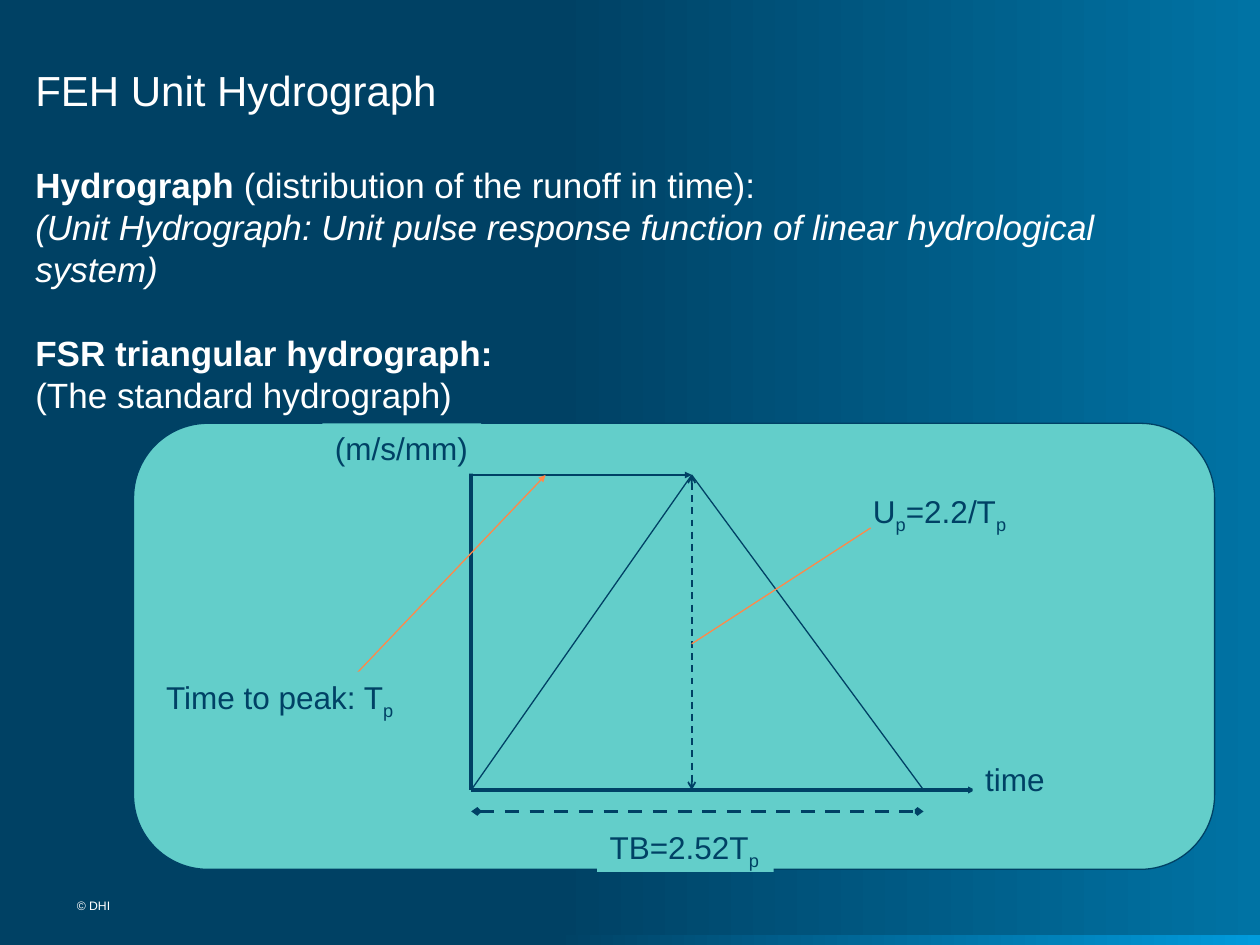
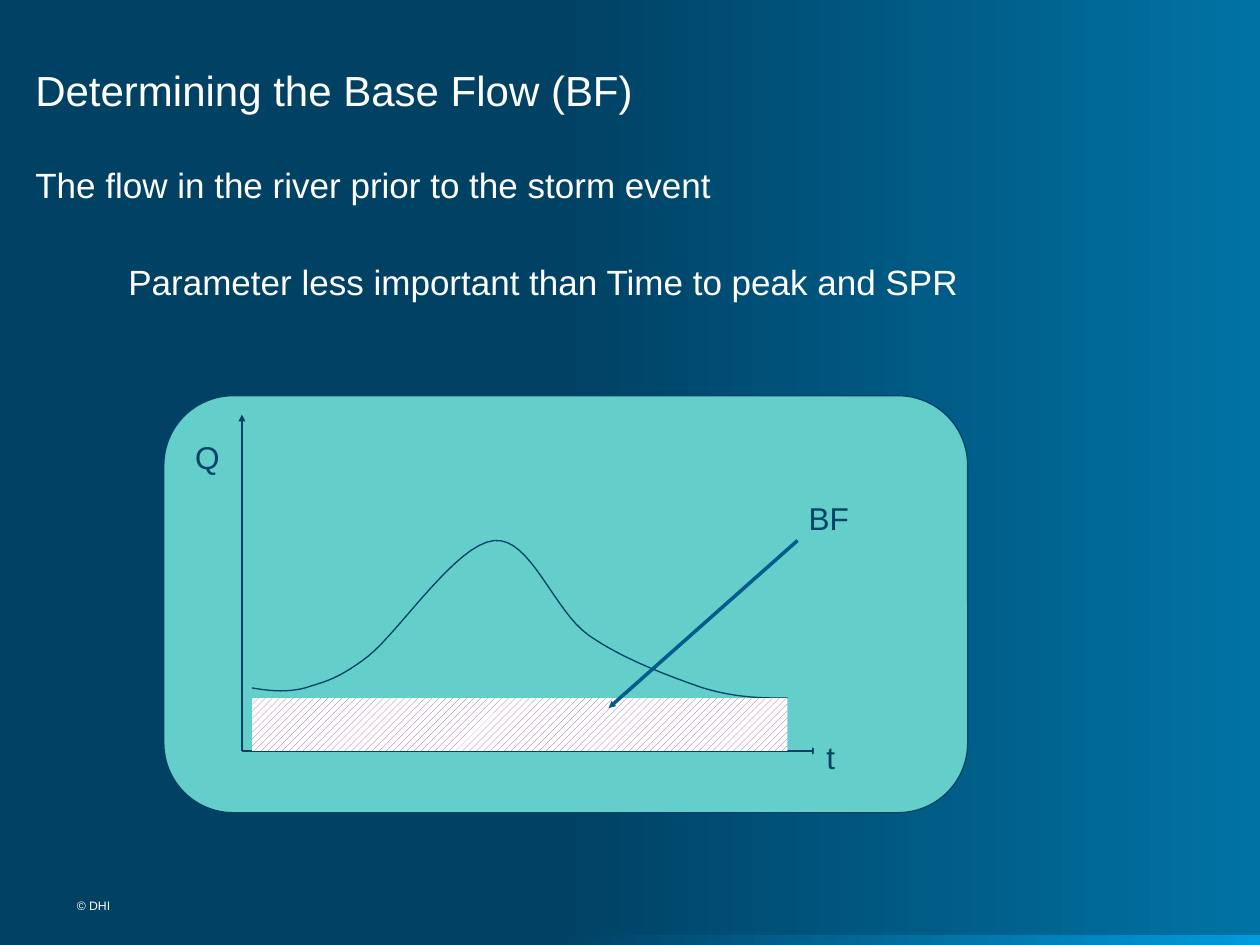
from dataclasses import dataclass

from lxml.etree import SubElement
from pptx import Presentation
from pptx.dml.color import RGBColor
from pptx.enum.dml import MSO_LINE, MSO_PATTERN
from pptx.enum.shapes import MSO_CONNECTOR, MSO_SHAPE
from pptx.enum.text import MSO_ANCHOR, MSO_AUTO_SIZE, PP_ALIGN
from pptx.oxml.ns import qn
from pptx.util import Inches, Pt


@dataclass(frozen=True)
class Theme:
    font: str = "Arial"
    navy: str = "004164"
    ocean: str = "0073A4"
    sky: str = "009BDC"
    ink: str = "004165"
    panel: str = "63CECA"
    callout: str = "FF8849"
    pointer: str = "005A8C"
    hatch: str = "93509E"
    white: str = "FFFFFF"
    title_size: int = 24
    body_size: int = 20
    label_size: int = 18
    footer_size: int = 7


THEME = Theme()
WIDTH, HEIGHT = 10, 7.5
TITLE_BOX = (0.28, 0.25, 8.6, 0.66)
BODY_BOX = (0.28, 1.3, 9.45, 5.6)
BAND_BOX = (0, HEIGHT - 0.08, WIDTH, 0.08)
FOOTER_BOX = (0.61, 7.13, 1.55, 0.19)
FOOTER = "© DHI"
LABEL_HEIGHT = 0.4

STYLES = {
    "plain": {"bold": False, "italic": False},
    "bold": {"bold": True, "italic": False},
    "italic": {"bold": False, "italic": True},
}
LINES = {
    "thin": {"color": THEME.ink, "width": 0.75},
    "axis": {"color": THEME.ink, "width": 2, "tail": "triangle"},
    "thin axis": {"color": THEME.ink, "width": 0.75, "tail": "triangle"},
    "height": {"color": THEME.ink, "width": 1, "dashed": True, "head": "arrow", "tail": "arrow"},
    "span": {"color": THEME.ink, "width": 2, "dashed": True, "head": "arrow", "tail": "arrow"},
    "callout": {"color": THEME.callout, "width": 0.75},
    "callout arrow": {"color": THEME.callout, "width": 0.75, "tail": "triangle"},
    "pointer": {"color": THEME.pointer, "width": 2, "tail": "triangle"},
}

START, PEAK, END = 3.74, 5.49, 7.33
TOP, BASE = 3.77, 6.27
ORIGIN, CREST = (START, BASE), (PEAK, TOP)
SPAN_ROW = 6.44

UNIT_HYDROGRAPH = {
    "title": "FEH Unit Hydrograph",
    "body": [
        (0, [("Hydrograph ", "bold"), ("(distribution of the runoff in time):", "plain")]),
        (0, [("(Unit Hydrograph: Unit pulse response function of linear hydrological system)", "italic")]),
        (24, [("FSR triangular hydrograph:", "bold")]),
        (0, [("(The standard hydrograph)", "plain")]),
    ],
    "panel": (1.06, 3.36, 8.58, 3.54),
    "marks": [
        ("line", "axis", ORIGIN, (START, 3.52)),
        ("line", "axis", ORIGIN, (7.74, BASE)),
        ("line", "thin", ORIGIN, CREST),
        ("line", "thin", CREST, (END, BASE)),
        ("label", (7.72, 5.98, 0.67), ["time"]),
        ("line", "height", CREST, (PEAK, BASE)),
        ("label", (6.83, 3.86, 1.56), ["U", "p", "=2.2/T", "p"]),
        ("line", "callout", (PEAK, 5.11), (6.91, 4.19)),
        ("line", "span", (START, SPAN_ROW), (END, SPAN_ROW)),
        ("label", (4.74, 6.52, 1.4), ["TB=2.52T", "p"]),
        ("label", (2.56, 3.36, 1.26), ["(m/s/mm)"]),
        ("line", "thin axis", (START, TOP), CREST),
        ("line", "callout arrow", (2.74, 5.44), (4.33, TOP)),
        ("label", (1.22, 5.33, 2.45), ["Time to peak: T", "p"]),
    ],
}

FLOW_ORIGIN = (1.92, 5.96)
FLOW_LEFT, FLOW_RIGHT, FLOW_LEVEL = 2, 6.25, 5.54
FLOW_CURVE = [
    ((2.13, 5.48), (2.26, 5.5), (2.42, 5.46)),
    ((2.57, 5.41), (2.67, 5.4), (2.92, 5.21)),
    ((3.17, 5.01), (3.62, 4.32), (3.92, 4.29)),
    ((4.21, 4.26), (4.39, 4.84), (4.67, 5.04)),
    ((4.94, 5.23), (5.32, 5.37), (5.58, 5.46)),
    ((5.85, 5.54), (6.05, 5.54), (FLOW_RIGHT, FLOW_LEVEL)),
]

BASE_FLOW = {
    "title": "Determining the Base Flow (BF)",
    "body": [(0, [("The flow in the river prior to the storm event", "plain")])],
    "panel": (1.3, 3.14, 6.38, 3.31),
    "marks": [
        ("note", (0.92, 2.02, 7.47, 0.91), "Parameter less important than Time to peak and SPR"),
        ("line", "thin axis", FLOW_ORIGIN, (6.5, FLOW_ORIGIN[1])),
        ("line", "thin axis", FLOW_ORIGIN, (FLOW_ORIGIN[0], 3.29)),
        ("curve", (FLOW_LEFT, 5.46), FLOW_CURVE),
        ("hatch", (FLOW_LEFT, FLOW_LEVEL, FLOW_RIGHT - FLOW_LEFT, FLOW_ORIGIN[1] - FLOW_LEVEL)),
        ("label", (1.45, 3.43, 0.4), ["Q"]),
        ("label", (6.46, 5.81, 0.27), ["t"]),
        ("label", (6.32, 3.91, 0.52), ["BF"]),
        ("line", "pointer", (6.33, 4.29), (4.83, 5.62)),
    ],
}


def assign(target, values):
    for name, value in values.items():
        setattr(target, name, value)


def rgb(color):
    return RGBColor.from_string(color)


def inches(values):
    return [Inches(value) for value in values]


def place(shape, box):
    assign(shape, dict(zip(("left", "top", "width", "height"), inches(box))))


def paint_solid(fill, color):
    fill.solid()
    fill.fore_color.rgb = rgb(color)


def paint_gradient(fill, end_color):
    fill.gradient()
    fill.gradient_angle = 0
    stops = zip(fill.gradient_stops, (0.44, 1), (THEME.navy, end_color))
    for stop, position, color in stops:
        stop.position = position
        stop.color.rgb = rgb(color)


def stroke(line, color, width):
    line.color.rgb = rgb(color)
    line.width = Pt(width)


def set_frame(frame, inset, anchor=MSO_ANCHOR.TOP, right=None):
    across, down = inset
    assign(frame, {
        "word_wrap": True,
        "auto_size": MSO_AUTO_SIZE.NONE,
        "vertical_anchor": anchor,
        "margin_left": Inches(across),
        "margin_right": Inches(across if right is None else right),
        "margin_top": Inches(down),
        "margin_bottom": Inches(down),
    })


def add_span(para, text, size, color, style="plain"):
    span = para.add_run()
    span.text = text
    assign(span.font, {"name": THEME.font, "size": Pt(size), **STYLES[style]})
    span.font.color.rgb = rgb(color)
    return span


def write_paragraphs(frame, paragraphs, size):
    for index, (before, spans) in enumerate(paragraphs):
        para = frame.add_paragraph() if index else frame.paragraphs[0]
        assign(para, {
            "alignment": PP_ALIGN.LEFT,
            "space_before": Pt(before),
            "line_spacing": 1.0,
        })
        properties = para._p.get_or_add_pPr()
        for name in ("marL", "indent"):
            properties.set(name, "0")
        SubElement(properties, qn("a:buNone"))
        for text, style in spans:
            add_span(para, text, size, THEME.white, style)


def add_line(page, style, start, end):
    look = LINES[style]
    line = page.shapes.add_connector(MSO_CONNECTOR.STRAIGHT, *inches(start + end))
    stroke(line.line, look["color"], look["width"])
    if look.get("dashed"):
        line.line.dash_style = MSO_LINE.DASH
    properties = line._element.spPr
    outline = properties.find(qn("a:ln"))
    for side in ("head", "tail"):
        if side in look:
            SubElement(outline, qn(f"a:{side}End"), type=look[side], w="sm", len="sm")
    SubElement(properties, qn("a:effectLst"))


def add_label(page, corner, pieces):
    box = page.shapes.add_textbox(*inches(corner + (LABEL_HEIGHT,)))
    paint_solid(box.fill, THEME.panel)
    set_frame(box.text_frame, (0.1, 0.05), right=0)
    for index, piece in enumerate(pieces):
        span = add_span(box.text_frame.paragraphs[0], piece, THEME.label_size, THEME.ink)
        if index % 2:
            span._r.get_or_add_rPr().set("baseline", "-25000")


def add_note(page, note_box, text):
    box = page.shapes.add_textbox(*inches(note_box))
    set_frame(box.text_frame, (0.1, 0.05))
    write_paragraphs(box.text_frame, [(0, [(text, "plain")])], THEME.body_size)


def bezier(points, share):
    rest = 1 - share
    weights = (rest ** 3, 3 * share * rest ** 2, 3 * share ** 2 * rest, share ** 3)
    return tuple(sum(weight * point[axis] for weight, point in zip(weights, points)) for axis in (0, 1))


def add_curve(page, start, segments, steps=16):
    points = [start]
    for segment in segments:
        controls = (points[-1], *segment)
        points += [bezier(controls, step / steps) for step in range(1, steps + 1)]
    first, *others = [inches(point) for point in points]
    builder = page.shapes.build_freeform(*first)
    builder.add_line_segments(others, close=False)
    curve = builder.convert_to_shape()
    curve.shadow.inherit = False
    paint_solid(curve.fill, THEME.panel)
    stroke(curve.line, THEME.ink, 0.75)


def add_block(page, kind, box):
    block = page.shapes.add_shape(kind, *inches(box))
    block.shadow.inherit = False
    block.line.fill.background()
    return block


def add_hatch(page, box):
    fill = add_block(page, MSO_SHAPE.RECTANGLE, box).fill
    fill.patterned()
    fill.pattern = MSO_PATTERN.WIDE_UPWARD_DIAGONAL
    fill.fore_color.rgb = rgb(THEME.hatch)
    fill.back_color.rgb = rgb(THEME.white)


DRAW = {"line": add_line, "label": add_label, "note": add_note, "curve": add_curve, "hatch": add_hatch}


def add_page(deck, content):
    page = deck.slides.add_slide(deck.slide_layouts[1])
    paint_gradient(add_block(page, MSO_SHAPE.RECTANGLE, BAND_BOX).fill, THEME.sky)

    title, body = page.shapes.title, page.placeholders[1]
    place(title, TITLE_BOX)
    set_frame(title.text_frame, (0, 0), MSO_ANCHOR.BOTTOM)
    write_paragraphs(title.text_frame, [(0, [(content["title"], "plain")])], THEME.title_size)
    place(body, BODY_BOX)
    set_frame(body.text_frame, (0, 0))
    write_paragraphs(body.text_frame, content["body"], THEME.body_size)

    panel = add_block(page, MSO_SHAPE.ROUNDED_RECTANGLE, content["panel"])
    paint_solid(panel.fill, THEME.panel)
    stroke(panel.line, THEME.ink, 0.75)
    for kind, *details in content["marks"]:
        DRAW[kind](page, *details)

    footer = page.shapes.add_textbox(*inches(FOOTER_BOX))
    set_frame(footer.text_frame, (0, 0))
    write_paragraphs(footer.text_frame, [(0, [(FOOTER, "plain")])], THEME.footer_size)


def main():
    deck = Presentation()
    assign(deck, {"slide_width": Inches(WIDTH), "slide_height": Inches(HEIGHT)})
    paint_gradient(deck.slide_master.background.fill, THEME.ocean)
    for content in (UNIT_HYDROGRAPH, BASE_FLOW):
        add_page(deck, content)
    deck.save("out.pptx")


if __name__ == "__main__":
    main()
